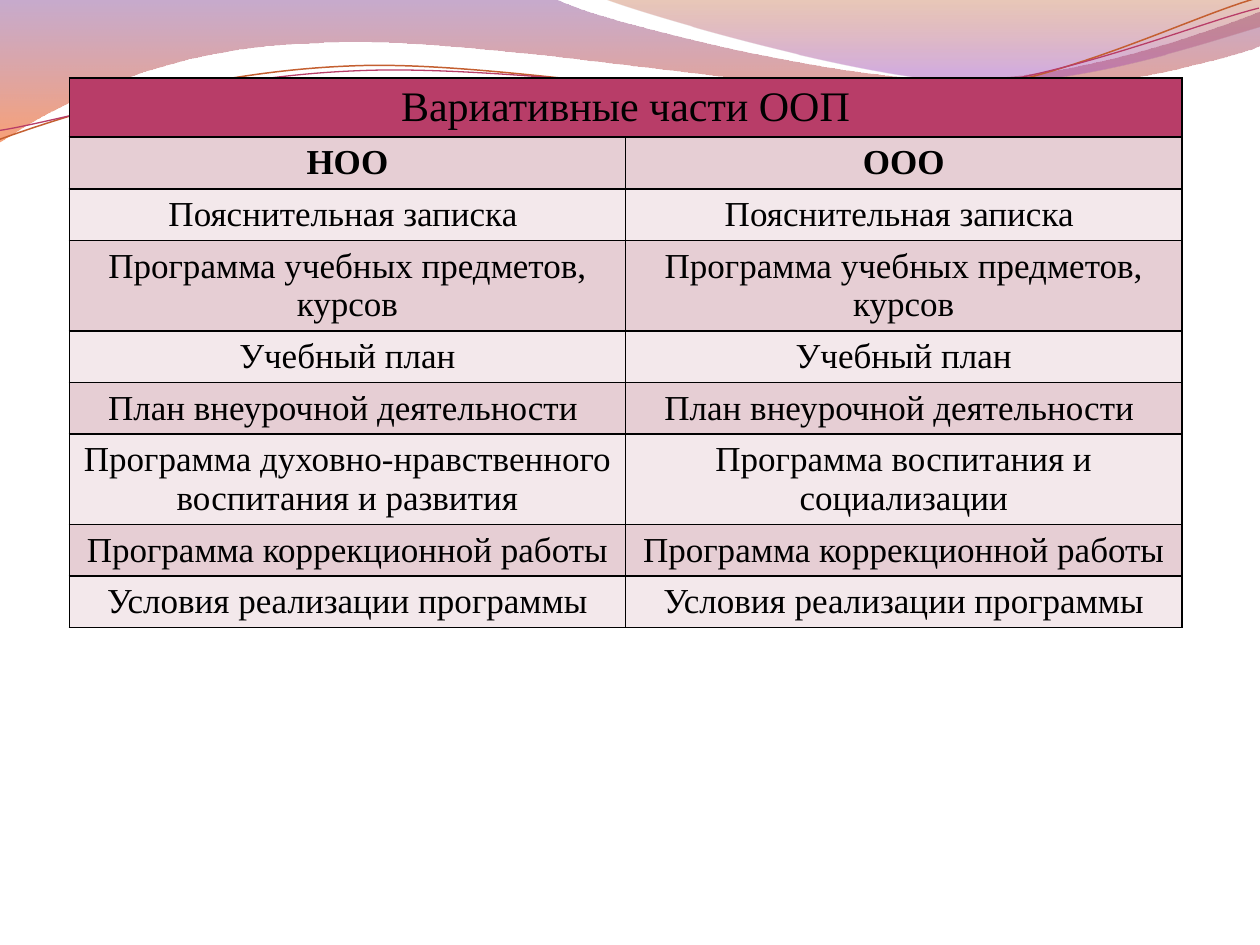
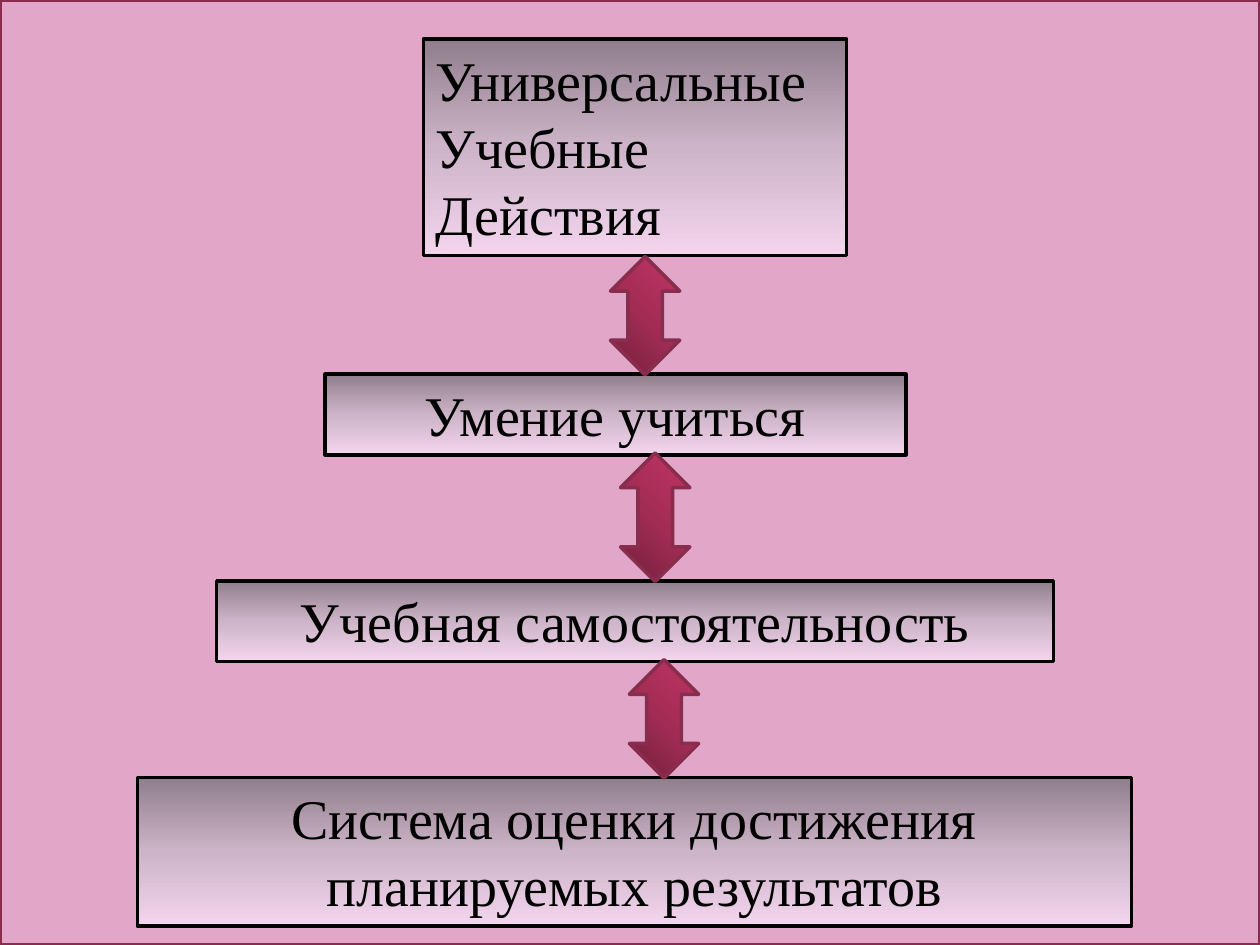
from lxml.etree import SubElement
from pptx import Presentation
from pptx.dml.color import RGBColor
from pptx.enum.shapes import MSO_SHAPE
from pptx.enum.text import MSO_AUTO_SIZE, PP_ALIGN
from pptx.oxml.ns import qn
from pptx.util import Inches, Pt

FONT = "Times New Roman"
BLACK = RGBColor(0x00, 0x00, 0x00)
BERRY = RGBColor(0xB8, 0x3D, 0x68)
RUST = RGBColor(0xC4, 0x5F, 0x30)
DARK_BERRY = RGBColor(0x88, 0x2D, 0x4D)
PINK = RGBColor(0xE2, 0xA7, 0xC8)
ROW_DARK = RGBColor(0xE6, 0xCE, 0xD4)
ROW_LIGHT = RGBColor(0xF3, 0xE8, 0xEB)

# Gradient stops: position in percent, colour, opacity in percent
VIOLET_ORANGE = [(0, RGBColor(0x83, 0x45, 0x91), 45), (100, RGBColor(0xF3, 0x53, 0x07), 55)]
ORANGE_VIOLET = [(0, RGBColor(0xB7, 0x49, 0x15), 30), (80, RGBColor(0xA1, 0x4B, 0xB4), 45)]
BOX_STOPS = [(0, RGBColor(0x90, 0x7E, 0x8C), 100), (50, RGBColor(0xCD, 0xB4, 0xC8), 100),
             (100, RGBColor(0xF3, 0xD5, 0xED), 100)]
ARROW_STOPS = [(0, RGBColor(0x72, 0x1F, 0x3C), 100), (50, RGBColor(0xA3, 0x2C, 0x55), 100),
               (100, RGBColor(0xC1, 0x34, 0x65), 100)]


def fill_gradient(shape, stops, clockwise_angle):
    shape.fill.gradient()
    shape.fill.gradient_angle = 360 - clockwise_angle
    stop_list = shape.element.spPr.find(qn("a:gradFill")).find(qn("a:gsLst"))
    for old_stop in list(stop_list):
        stop_list.remove(old_stop)
    for position, color, opacity in stops:
        stop = SubElement(stop_list, qn("a:gs"), pos=str(position * 1000))
        rgb = SubElement(stop, qn("a:srgbClr"), val=str(color))
        if opacity < 100:
            SubElement(rgb, qn("a:alpha"), val=str(opacity * 1000))


def build_curve(slide, start, segments, close):
    """Build an outline of lines (2 numbers) and Bezier curves (6 numbers)."""
    points = [(Inches(x), Inches(y))
              for segment in segments for x, y in zip(segment[::2], segment[1::2])]
    builder = slide.shapes.build_freeform(Inches(start[0]), Inches(start[1]))
    builder.add_line_segments(points, close=close)
    curve = builder.convert_to_shape()
    curve.shadow.inherit = False
    steps = iter(list(curve.element.iter(qn("a:lnTo"))))
    for segment in segments:
        step = next(steps)
        if len(segment) == 6:
            step.tag = qn("a:cubicBezTo")
            for _ in range(2):
                extra = next(steps)
                extra.getparent().remove(extra)
                step.append(extra[0])
    return curve


prs = Presentation()
prs.slide_width = Inches(10)
prs.slide_height = Inches(7.5)
blank = prs.slide_layouts[6]
parts_slide = prs.slides.add_slide(blank)
skills_slide = prs.slides.add_slide(blank)

# Shared waves at the top, kept on the slide master
bands = [
    (VIOLET_ORANGE, (0, 0), [
        (4.4, -0.01), (4.76, 0.17, 6.64, 0.63, 7.58, 0.63),
        (8.53, 0.63, 9.58, 0.26, 10, 0.09), (10.01, 0.36),
        (9.83, 0.44, 8.7, 0.76, 7.46, 0.75), (6.22, 0.75, 3.82, 0.28, 2.57, 0.34),
        (1.29, 0.36, 0.46, 0.83, -0.01, 1.13), (0, 0)]),
    (ORANGE_VIOLET, (4.79, -0.01), [
        (5.09, 0.11, 6.82, 0.62, 7.69, 0.65), (8.56, 0.69, 9.61, 0.32, 10, 0.21),
        (10, 0), (4.79, -0.01)]),
]
strands = [
    (RUST, 0.85, (-0.02, 0.87), [
        (0.47, 0.72, 1.58, 0.41, 2.78, 0.42), (3.96, 0.42, 5.91, 0.93, 7.12, 0.9),
        (8.32, 0.87, 9.4, 0.36, 10, 0.22)]),
    (BERRY, 0.75, (-0.02, 0.8), [
        (0.46, 0.75, 1.64, 0.45, 2.83, 0.46), (4.03, 0.46, 5.96, 0.88, 7.16, 0.85),
        (8.35, 0.83, 9.42, 0.42, 10.01, 0.3)]),
]
waves = []
for stops, start, segments in bands:
    band = build_curve(parts_slide, start, segments, True)
    fill_gradient(band, stops, 90)
    band.line.fill.background()
    waves.append(band)
for color, width, start, segments in strands:
    strand = build_curve(parts_slide, start, segments, False)
    strand.rotation = 357.3
    strand.fill.background()
    strand.line.color.rgb = color
    strand.line.width = Pt(width)
    waves.append(strand)
for wave in waves:
    prs.slide_master.shapes.element.append(wave.element)

# Slide 1: table of the variable parts
program_rows = [
    ("Вариативные части ООП", ""),
    ("НОО", "ООО"),
    ("Пояснительная записка ", "Пояснительная записка "),
    ("Программа учебных предметов, курсов", "Программа учебных предметов, курсов"),
    ("Учебный план", "Учебный план"),
    ("План внеурочной деятельности ", "План внеурочной деятельности "),
    ("Программа духовно-нравственного воспитания и развития",
     "Программа воспитания и социализации"),
    ("Программа коррекционной работы", "Программа коррекционной работы"),
    ("Условия реализации программы", "Условия реализации программы"),
]
programs_frame = parts_slide.shapes.add_table(
    len(program_rows), 2, Inches(0.55), Inches(0.62), Inches(8.83), Inches(4.63))
programs = programs_frame.table
programs.cell(0, 0).merge(programs.cell(0, 1))
for row_index, labels in enumerate(program_rows):
    programs.rows[row_index].height = Inches(0.41)
    for column_index, label in enumerate(labels):
        cell = programs.cell(row_index, column_index)
        properties = cell._tc.get_or_add_tcPr()
        for side in ("a:lnL", "a:lnR", "a:lnT", "a:lnB"):
            border = SubElement(properties, qn(side), w=str(Pt(1)))
            SubElement(SubElement(border, qn("a:solidFill")), qn("a:srgbClr"), val=str(BLACK))
        cell.fill.solid()
        if row_index == 0:
            cell.fill.fore_color.rgb = BERRY
        else:
            cell.fill.fore_color.rgb = ROW_DARK if row_index % 2 else ROW_LIGHT
        if not label:
            continue
        paragraph = cell.text_frame.paragraphs[0]
        paragraph.alignment = PP_ALIGN.CENTER
        run = paragraph.add_run()
        run.text = label
        run.font.name = FONT
        run.font.size = Pt(24 if row_index == 0 else 20)
        run.font.bold = row_index == 1
        run.font.color.rgb = BLACK
programs_frame.height = Inches(4.63)

# Slide 2: framed pink backdrop
backdrop = skills_slide.shapes.add_shape(
    MSO_SHAPE.RECTANGLE, 0, 0, prs.slide_width, prs.slide_height)
backdrop.shadow.inherit = False
backdrop.fill.solid()
backdrop.fill.fore_color.rgb = PINK
backdrop.line.color.rgb = DARK_BERRY
backdrop.line.width = Pt(2)

# Chain of skills
skills = [
    (3.36, 0.31, 3.36, 1.72, PP_ALIGN.LEFT, ["Универсальные", "Учебные", "Действия"]),
    (2.58, 2.97, 4.61, 0.64, PP_ALIGN.CENTER, ["Умение учиться"]),
    (1.72, 4.61, 6.64, 0.64, PP_ALIGN.CENTER, ["Учебная самостоятельность"]),
    (1.09, 6.17, 7.89, 1.18, PP_ALIGN.CENTER,
     ["Система оценки достижения планируемых результатов"]),
]
for left, top, width, height, alignment, lines in skills:
    skill = skills_slide.shapes.add_textbox(
        Inches(left), Inches(top), Inches(width), Inches(height))
    fill_gradient(skill, BOX_STOPS, 90)
    skill.line.color.rgb = BLACK
    skill.line.width = Pt(2)
    frame = skill.text_frame
    frame.word_wrap = True
    frame.auto_size = MSO_AUTO_SIZE.SHAPE_TO_FIT_TEXT
    for index, line in enumerate(lines):
        paragraph = frame.add_paragraph() if index else frame.paragraphs[0]
        paragraph.alignment = alignment
        run = paragraph.add_run()
        run.text = line
        run.font.name = FONT
        run.font.size = Pt(32)
        run.font.color.rgb = BLACK

# Two-way arrows between the skills, turned upright
for left, top, length in [(4.65, 2.23, 0.94), (4.8, 5.43, 0.94), (4.69, 3.83, 1.02)]:
    arrow = skills_slide.shapes.add_shape(
        MSO_SHAPE.LEFT_RIGHT_ARROW, Inches(left), Inches(top), Inches(length), Inches(0.55))
    arrow.rotation = 270
    arrow.shadow.inherit = False
    fill_gradient(arrow, ARROW_STOPS, 45)
    arrow.line.color.rgb = DARK_BERRY
    arrow.line.width = Pt(2)

prs.save("out.pptx")
